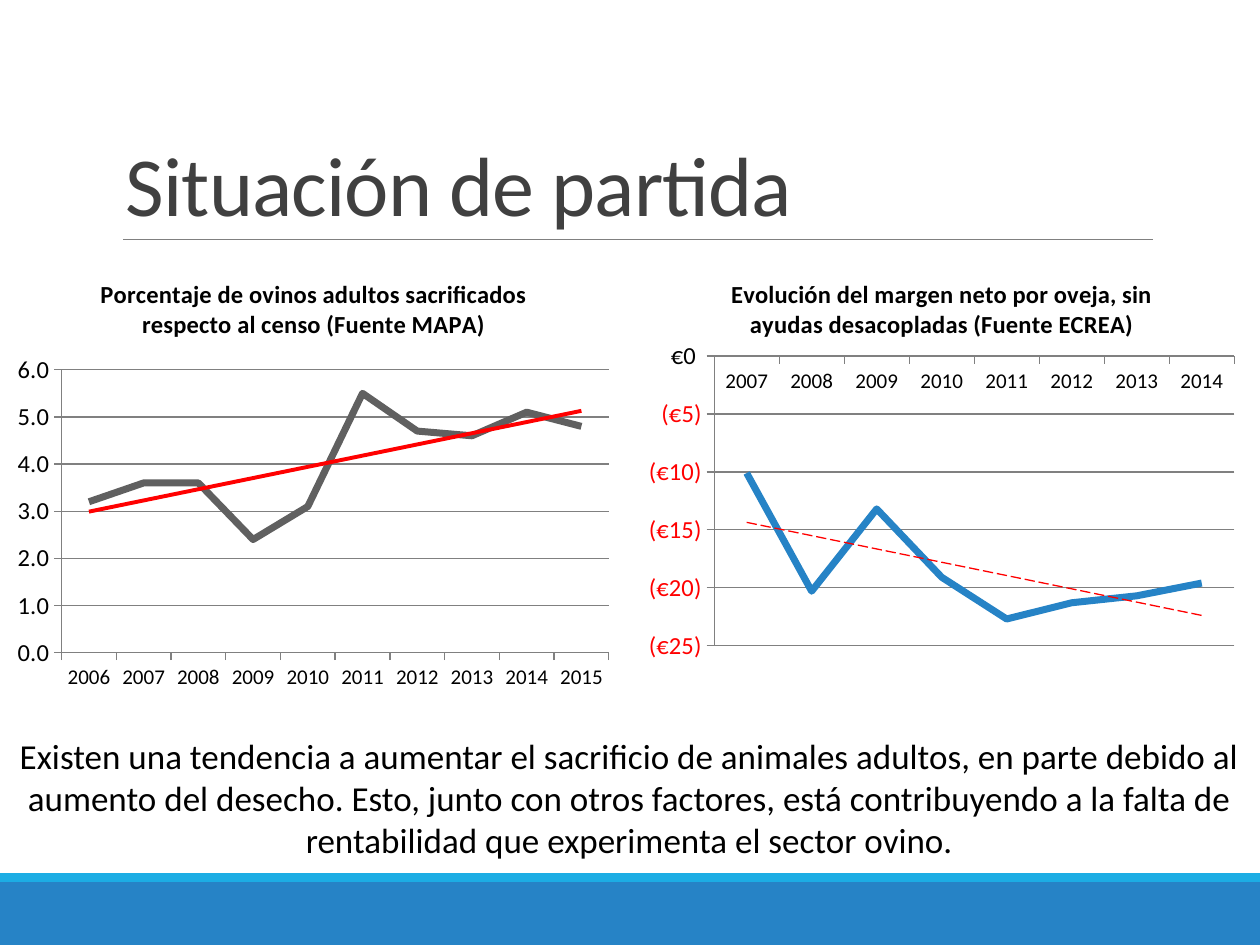
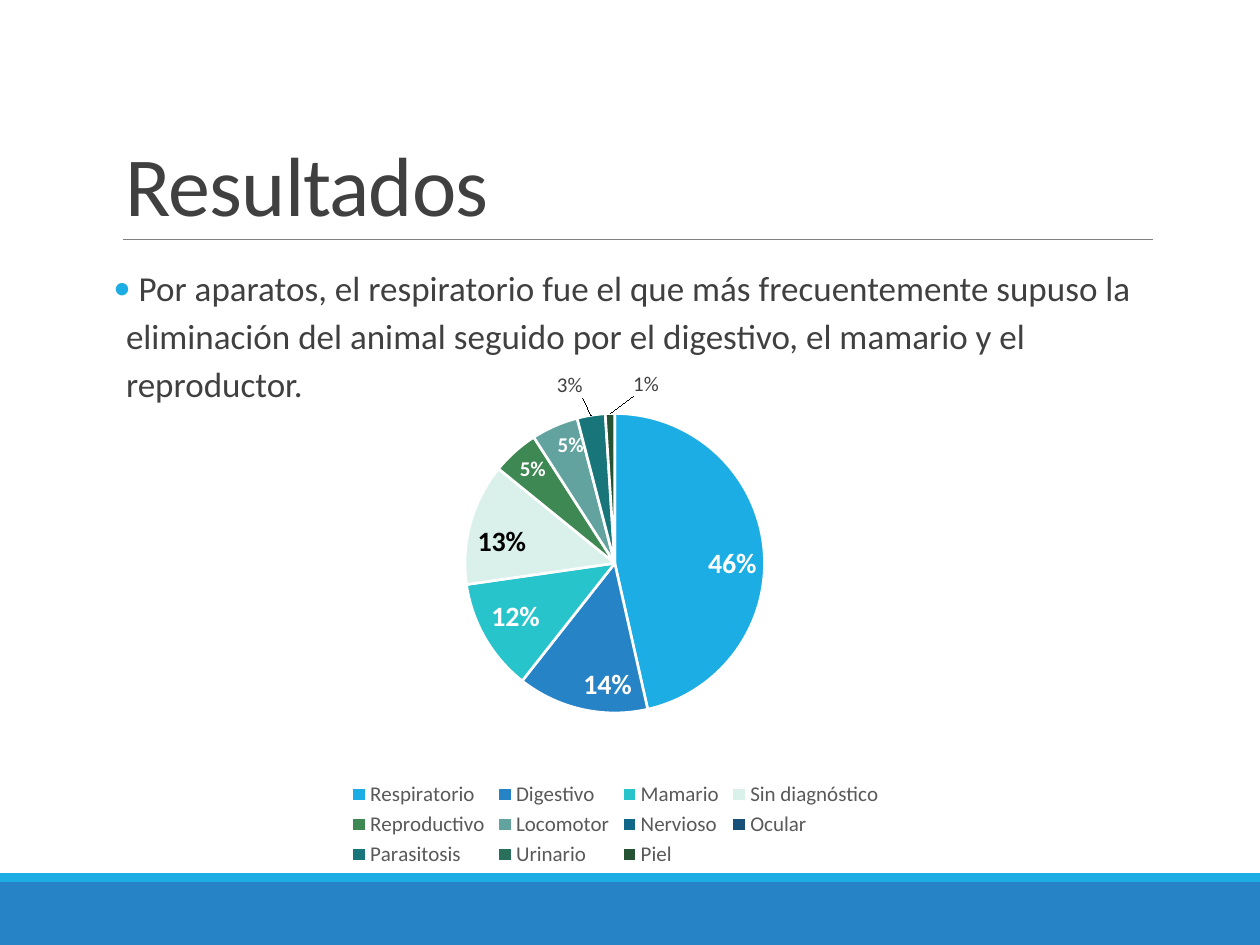
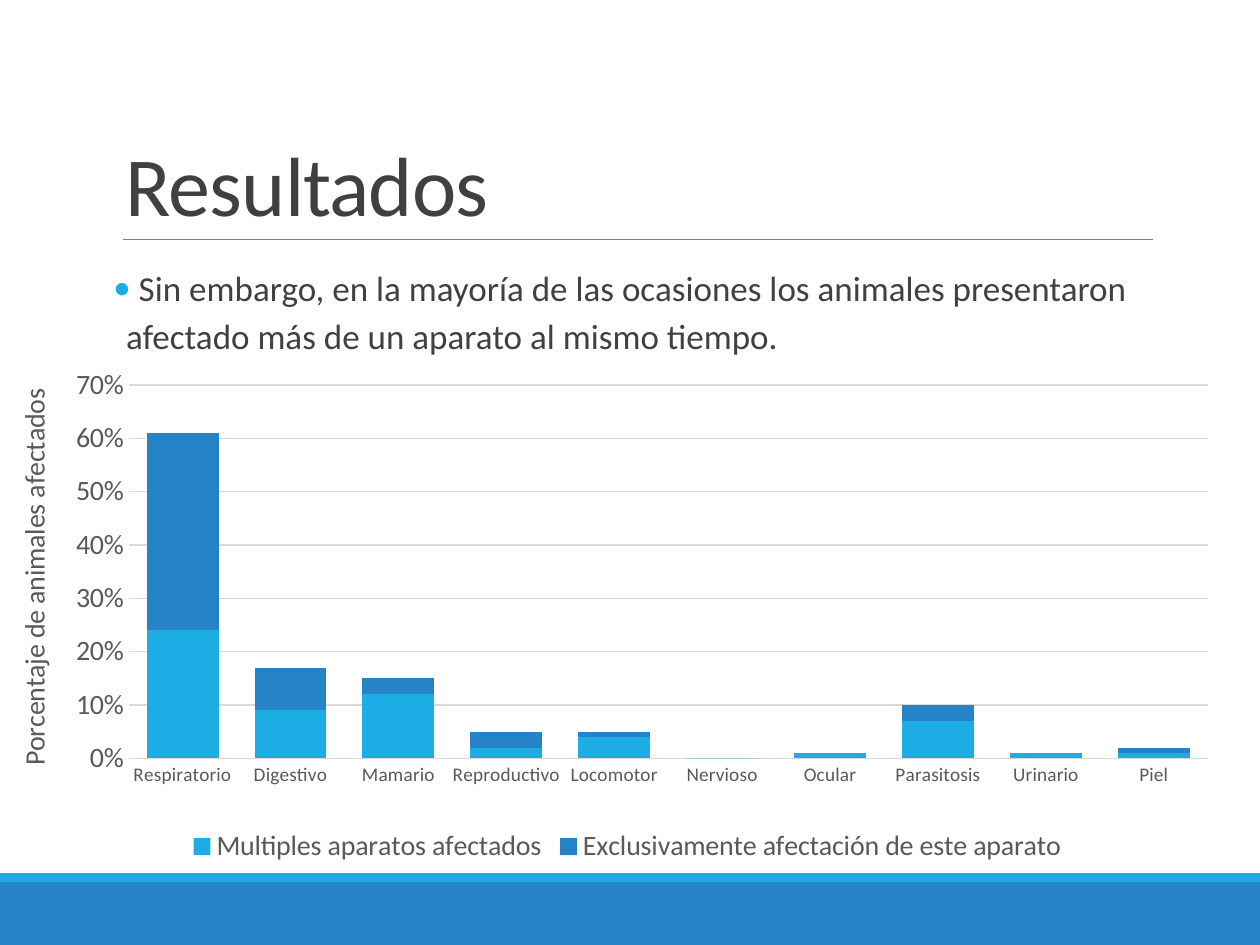
import pptx
import pptx.chart.data
import pptx.dml.color
import pptx.enum.chart
import pptx.enum.dml
import pptx.enum.shapes
import pptx.enum.text
import pptx.oxml
import pptx.oxml.ns
import pptx.util
from dataclasses import dataclass

Inches = pptx.util.Inches
Pt = pptx.util.Pt
qn = pptx.oxml.ns.qn
Kind = pptx.enum.chart.XL_CHART_TYPE
Tick = pptx.enum.chart.XL_TICK_MARK
Place = pptx.enum.chart.XL_LABEL_POSITION
NS = pptx.oxml.ns.nsdecls("c", "a")


@dataclass(frozen=True)
class Theme:
    font: str = "Calibri"
    sky: str = "1CADE4"
    blue: str = "2683C6"
    ink: str = "404040"
    soft: str = "595959"
    dark: str = "606060"
    rule: str = "808080"
    pale: str = "D9D9D9"
    black: str = "000000"
    white: str = "FFFFFF"
    red: str = "FF0000"
    slices: tuple = ("1CADE4", "2683C6", "28C4CC", "D9F1EA", "3E8853", "62A39F",
                     "106889", "174F77", "18767A", "28705B", "255232")
    head: float = 48
    body: float = 20
    large: float = 16
    mid: float = 14
    small: float = 12
    tiny: float = 11


def rgb(code):
    return pptx.dml.color.RGBColor.from_string(code)


def frame(box):
    return [Inches(n) for n in box]


def spot(x, y, w=None, h=None):
    """Layout element; with a size it fixes the inner plot area."""
    inner = '<c:layoutTarget val="inner"/>' if w else ""
    modes = '<c:xMode val="edge"/><c:yMode val="edge"/>' if w else ""
    size = f'<c:w val="{w}"/><c:h val="{h}"/>' if w else ""
    return pptx.oxml.parse_xml(
        f'<c:layout {NS}><c:manualLayout>{inner}{modes}<c:x val="{x}"/>'
        f'<c:y val="{y}"/>{size}</c:manualLayout></c:layout>')


class Deck:
    def __init__(self, theme):
        self.look = theme
        self.prs = pptx.Presentation()
        self.prs.slide_width = Inches(10)
        self.prs.slide_height = Inches(7.5)
        self.slide = None

    def page(self, title):
        """New slide with bands, rule and title."""
        self.slide = self.prs.slides.add_slide(self.prs.slide_layouts[6])
        self.band((0, 7, 10, 0.5), self.look.blue)
        self.band((0, 6.93, 10, 0.07), self.look.sky)
        self.line(0.98, 1.9, 9.15, 1.9)
        para = self.text(title, (0.9, 0.31, 8.25, 1.59), self.look.head, self.look.ink,
                         anchor=pptx.enum.text.MSO_ANCHOR.BOTTOM)
        para.line_spacing = 0.85
        para.runs[0].font._element.set("spc", "-50")

    def band(self, box, color):
        rect = self.slide.shapes.add_shape(
            pptx.enum.shapes.MSO_SHAPE.RECTANGLE, *frame(box))
        rect.shadow.inherit = False
        rect.fill.solid()
        rect.fill.fore_color.rgb = rgb(color)
        rect.line.fill.background()

    def line(self, *ends):
        rule = self.slide.shapes.add_connector(
            pptx.enum.shapes.MSO_CONNECTOR.STRAIGHT, *frame(ends))
        self.stroke(rule, self.look.rule, 0.5)
        rule._element.spPr.append(pptx.oxml.parse_xml(f"<a:effectLst {NS}/>"))

    def stroke(self, item, color, width):
        item.line.color.rgb = rgb(color)
        item.line.width = Pt(width)

    def style(self, font, size, color, bold=False):
        font.name = self.look.font
        font.size = Pt(size)
        font.color.rgb = rgb(color)
        font.bold = bold

    def text(self, words, box, size, color, anchor=pptx.enum.text.MSO_ANCHOR.TOP, side=0.1):
        tf = self.slide.shapes.add_textbox(*frame(box)).text_frame
        tf.word_wrap = True
        tf.vertical_anchor = anchor
        tf.margin_left = tf.margin_right = Inches(side)
        tf.text = words
        para = tf.paragraphs[0]
        self.style(para.runs[0].font, size, color)
        return para

    def bullet(self, words):
        para = self.text(words, (0.9, 2.02, 8.25, 4.4), self.look.body, self.look.ink, side=0)
        para.line_spacing = 1.14
        para.space_before = Pt(12)
        para.space_after = Pt(2)
        props = para._element.get_or_add_pPr()
        props.set("marL", str(Inches(0.1)))
        props.set("indent", str(Inches(-0.1)))
        for mark in (f'<a:buClr {NS}><a:srgbClr val="{self.look.sky}"/></a:buClr>',
                     f'<a:buFont {NS} typeface="{self.look.font}"/>',
                     f'<a:buChar {NS} char="•"/>'):
            props.append(pptx.oxml.parse_xml(mark))

    def chart(self, kind, box, cats, rows, plot):
        data = pptx.chart.data.CategoryChartData()
        data.categories = cats
        for name, vals in rows:
            data.add_series(name, vals)
        chart = self.slide.shapes.add_chart(kind, *frame(box), data).chart
        self.style(chart.font, 10, self.look.black)
        chart.has_title = chart.has_legend = False
        chart.plots[0].vary_by_categories = False
        area = chart._chartSpace.find(qn("c:chart")).find(qn("c:plotArea"))
        for old in area.findall(qn("c:layout")):
            area.remove(old)
        area.insert(0, spot(*plot))
        return chart

    def legend(self, chart, size):
        chart.has_legend = True
        chart.legend.position = pptx.enum.chart.XL_LEGEND_POSITION.BOTTOM
        chart.legend.include_in_layout = False
        self.style(chart.legend.font, size, self.look.soft)

    def axes(self, chart, span, fmt, sizes, color, grid, tick):
        """Shared axis style; span is minimum, maximum and step."""
        cat, val = chart.category_axis, chart.value_axis
        for axis, size in zip((cat, val), sizes):
            axis.major_tick_mark = tick
            axis.minor_tick_mark = Tick.NONE
            self.style(axis.tick_labels.font, size, color)
            self.stroke(axis.format, grid, 0.75)
        val.minimum_scale, val.maximum_scale, val.major_unit = span
        val.has_major_gridlines = True
        self.stroke(val.major_gridlines.format, grid, 0.75)
        val.tick_labels.number_format = fmt
        val.tick_labels.number_format_is_linked = False

    def trend(self, title, box, years, vals, plot, span, fmt, color, width, dash):
        """Line chart with a linear trend."""
        look = self.look
        chart = self.chart(Kind.LINE, box, [str(y) for y in years],
                           [("Series 1", vals)], plot)
        chart.has_title = True
        chart.chart_title.include_in_layout = False
        chart.chart_title.text_frame.text = title
        run = chart.chart_title.text_frame.paragraphs[0].runs[0]
        self.style(run.font, look.mid, look.black, True)
        self.axes(chart, span, fmt, (look.small, look.mid), look.black, look.rule, Tick.OUTSIDE)
        series = chart.series[0]
        series.smooth = False
        self.stroke(series.format, color, 4)
        series._element.find(qn("c:cat")).addprevious(pptx.oxml.parse_xml(
            f'<c:trendline {NS}><c:spPr><a:ln w="{Pt(width)}"><a:solidFill>'
            f'<a:srgbClr val="{look.red}"/></a:solidFill><a:prstDash val="{dash}"/></a:ln>'
            '</c:spPr><c:trendlineType val="linear"/><c:dispRSqr val="0"/>'
            '<c:dispEq val="0"/></c:trendline>'))

    def pie(self, box, cats, vals, plot, inside, shifts):
        """Pie with inner labels (size, colour) and then shifted outer ones."""
        look = self.look
        chart = self.chart(Kind.PIE, box, cats, [("Series 1", vals)], plot)
        self.legend(chart, look.small)
        series = chart.series[0]
        tags = series.data_labels
        tags.show_percentage = True
        tags.show_value = False
        tags.number_format = "0%"
        tags.number_format_is_linked = False
        tags.position = Place.OUTSIDE_END
        self.style(tags.font, look.small, look.ink)
        for i, color in enumerate(look.slices):
            point = series.points[i]
            point.format.fill.solid()
            point.format.fill.fore_color.rgb = rgb(color)
            self.stroke(point.format, look.white, 1.5)
            label = point.data_label
            if i < len(inside):
                self.style(label.font, *inside[i], True)
                label.position = Place.INSIDE_END
            else:
                self.style(label.font, look.small, look.ink)
                label.position = Place.OUTSIDE_END
        labels = list(series._element.iter(qn("c:dLbl")))
        for label in labels:
            label.find(qn("c:showVal")).set("val", "0")
            label.find(qn("c:showPercent")).set("val", "1")
        for label, shift in zip(labels[len(inside):], shifts):
            label.find(qn("c:idx")).addnext(spot(*shift))

    def stack(self, box, cats, rows, plot, title):
        """Stacked columns with a titled value axis."""
        look = self.look
        chart = self.chart(Kind.COLUMN_STACKED, box, cats, rows, plot)
        self.legend(chart, look.large)
        self.axes(chart, (0, 0.7, 0.1), "0%", (look.tiny, look.large), look.soft,
                  look.pale, Tick.NONE)
        val = chart.value_axis
        val.format.line.fill.background()
        val.has_title = True
        val.axis_title.text_frame.text = title
        run = val.axis_title.text_frame.paragraphs[0].runs[0]
        self.style(run.font, look.large, look.soft)
        chart.plots[0].gap_width = 50
        chart.plots[0].overlap = 100
        for series, color in zip(chart.series, (look.sky, look.blue)):
            series.format.fill.solid()
            series.format.fill.fore_color.rgb = rgb(color)


def main():
    look = Theme()
    deck = Deck(look)

    # Starting point: two trends
    deck.page("Situación de partida")
    deck.trend("Porcentaje de ovinos adultos sacrificados respecto al censo (Fuente MAPA)",
               (0.05, 2.04, 4.88, 3.51), range(2006, 2016),
               (3.2, 3.6, 3.6, 2.4, 3.1, 5.5, 4.7, 4.6, 5.1, 4.8),
               (0.09, 0.255, 0.89, 0.64), (0, 6, 1), "0.0", look.dark, 2.25, "solid")
    para = deck.text(
        "Existen una tendencia a aumentar el sacrificio de animales adultos, en parte "
        "debido al aumento del desecho. Esto, junto con otros factores, está contribuyendo "
        "a la falta de rentabilidad que experimenta el sector ovino.",
        (0.05, 5.78, 9.89, 1.11), look.body, look.black)
    para.alignment = pptx.enum.text.PP_ALIGN.CENTER
    deck.trend("Evolución del margen neto por oveja, sin ayudas desacopladas (Fuente ECREA)",
               (5, 2.04, 4.95, 3.51), range(2007, 2015),
               (-10.1, -20.3, -13.2, -19.1, -22.7, -21.3, -20.7, -19.6),
               (0.135, 0.224, 0.834, 0.655), (-25, 0, 5),
               '"€"#,##0_);[Red]\\("€"#,##0\\)', look.blue, 0.75, "lgDash")

    # Results: share of each system
    organs = ["Respiratorio", "Digestivo", "Mamario", "Sin diagnóstico", "Reproductivo",
              "Locomotor", "Nervioso", "Ocular", "Parasitosis", "Urinario", "Piel"]
    deck.page("Resultados")
    deck.bullet(" Por aparatos, el respiratorio fue el que más frecuentemente supuso la "
                "eliminación del animal seguido por el digestivo, el mamario y el reproductor.")
    deck.pie((2, 2.95, 5.77, 3.97), organs, (46, 14, 12, 13, 5, 5, 0, 0, 3, 0, 1),
             (0.293, 0.083, 0.412, 0.6),
             [(look.large, look.white)] * 3 + [(look.large, look.black)]
             + [(look.small, look.white)] * 2,
             [(x, -0.02) for x in (-0.08, -0.03, -0.01, 0.01, 0.05)])

    # Results: single and multiple systems
    deck.page("Resultados")
    deck.bullet(" Sin embargo, en la mayoría de las ocasiones los animales presentaron "
                "afectado más de un aparato al mismo tiempo.")
    deck.stack((0.08, 2.92, 9.8, 3.98), [o for o in organs if o != "Sin diagnóstico"],
               [("Multiples aparatos afectados",
                 (0.24, 0.09, 0.12, 0.02, 0.04, 0, 0.01, 0.07, 0.01, 0.01)),
                ("Exclusivamente afectación de este aparato",
                 (0.37, 0.08, 0.03, 0.03, 0.01, 0, 0, 0.03, 0, 0.01))],
               (0.096, 0.034, 0.874, 0.745), "Porcentaje de animales afectados")

    deck.prs.save("out.pptx")


if __name__ == "__main__":
    main()
